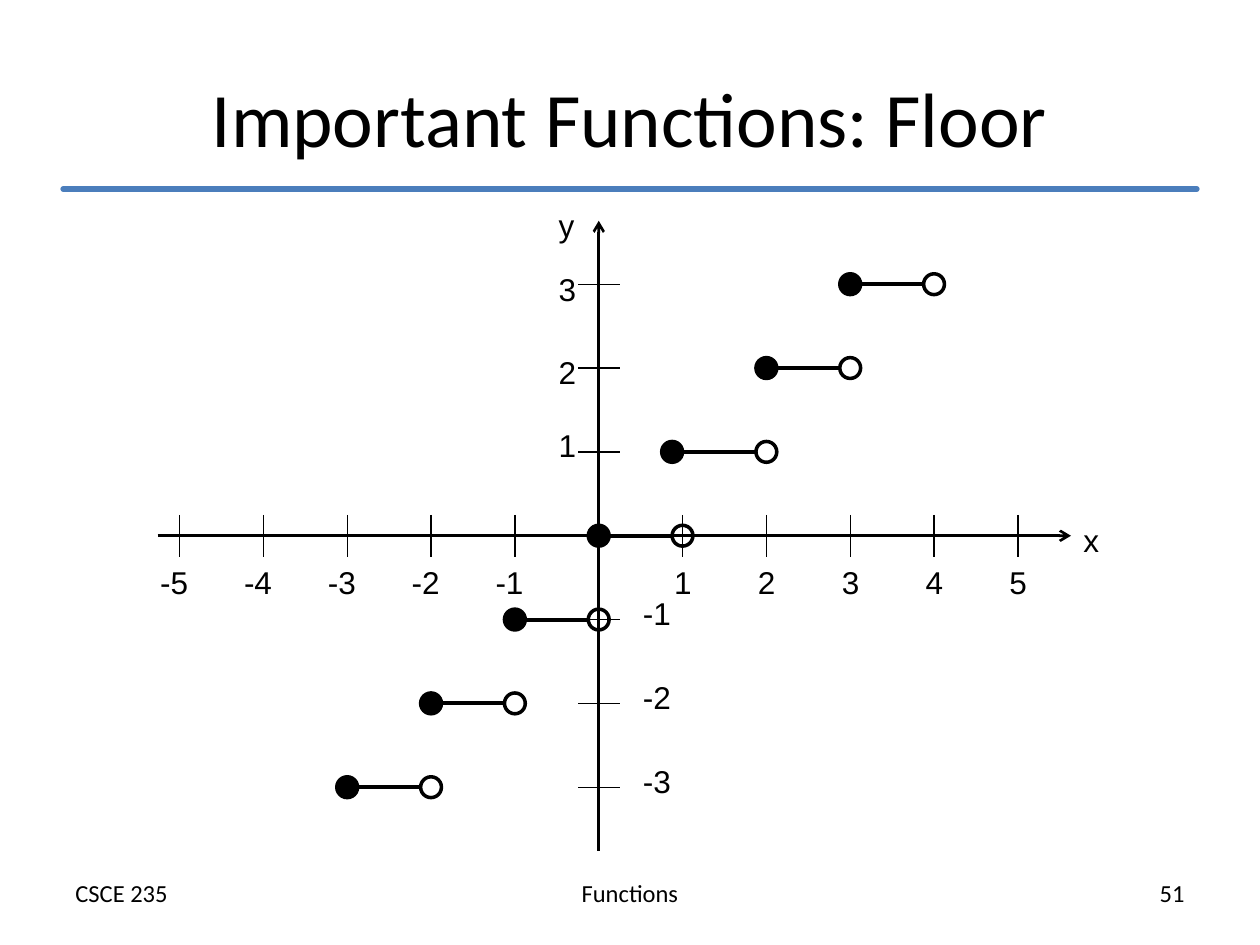
from dataclasses import dataclass

import lxml.etree
import pptx
import pptx.dml.color
import pptx.enum.shapes
import pptx.enum.text
import pptx.oxml.ns
import pptx.util

Cm = pptx.util.Cm
Pt = pptx.util.Pt
ALIGN = pptx.enum.text.PP_ALIGN


@dataclass(frozen=True)
class Theme:
    ink: str = "000000"
    accent: str = "4B7EBC"
    heading_font: str = "Calibri"
    label_font: str = "Arial"
    title_size: int = 44
    label_size: int = 18
    footer_size: int = 14
    rule_width: float = 3
    step_width: float = 2.25
    dot_width: float = 2
    axis_width: float = 1.5
    tick_width: float = 0.75


@dataclass(frozen=True)
class Box:
    left: float
    top: float
    width: float
    height: float

    def lengths(self):
        return Cm(self.left), Cm(self.top), Cm(self.width), Cm(self.height)


THEME = Theme()
UNIT = 1.69
TICK_HALF = 0.42
DOT_RADIUS = 0.21
LABEL_WIDTH, LABEL_HEIGHT = 1.27, 1.02


def color(value):
    return pptx.dml.color.RGBColor.from_string(value)


def format_paragraph(paragraph, font, size, alignment):
    paragraph.alignment = alignment
    paragraph.font.name = font
    paragraph.font.size = Pt(size)
    paragraph.font.color.rgb = color(THEME.ink)


def add_text(slide, box, text, font, size, alignment=ALIGN.LEFT):
    shape = slide.shapes.add_textbox(*box.lengths())
    frame = shape.text_frame
    frame.word_wrap = True
    frame.auto_size = pptx.enum.text.MSO_AUTO_SIZE.SHAPE_TO_FIT_TEXT
    frame.text = text
    format_paragraph(frame.paragraphs[0], font, size, alignment)


def add_label(slide, left, top, text):
    box = Box(left, top, LABEL_WIDTH, LABEL_HEIGHT)
    add_text(slide, box, text, THEME.label_font, THEME.label_size)


def add_line(slide, start, end, width, line_color=THEME.ink, arrow=False, cap=None):
    connector = slide.shapes.add_connector(
        pptx.enum.shapes.MSO_CONNECTOR.STRAIGHT, *map(Cm, (*start, *end)))
    connector.line.color.rgb = color(line_color)
    connector.line.width = Pt(width)
    properties = connector._element.spPr
    outline = properties.find(pptx.oxml.ns.qn("a:ln"))
    if cap:
        outline.set("cap", cap)
    if arrow:
        lxml.etree.SubElement(outline, pptx.oxml.ns.qn("a:tailEnd"), type="arrow")
    lxml.etree.SubElement(properties, pptx.oxml.ns.qn("a:effectLst"))


def add_dot(slide, x, y, filled):
    box = Box(x - DOT_RADIUS, y - DOT_RADIUS, 2 * DOT_RADIUS, 2 * DOT_RADIUS)
    shape = slide.shapes.add_shape(
        pptx.enum.shapes.MSO_SHAPE.OVAL, *box.lengths())
    shape.shadow.inherit = False
    if filled:
        shape.fill.solid()
        shape.fill.fore_color.rgb = color(THEME.ink)
    else:
        shape.fill.background()
    shape.line.color.rgb = color(THEME.ink)
    shape.line.width = Pt(THEME.dot_width)


def build_title(slide, box, text):
    title = slide.shapes.title
    title.left, title.top, title.width, title.height = box.lengths()
    title.text_frame.text = text
    title.text_frame.vertical_anchor = pptx.enum.text.MSO_ANCHOR.MIDDLE
    format_paragraph(title.text_frame.paragraphs[0], THEME.heading_font,
                     THEME.title_size, ALIGN.CENTER)
    rule_top = box.top + 3.05
    add_line(slide, (box.left, rule_top), (box.left + box.width, rule_top),
             THEME.rule_width, THEME.accent, cap="rnd")


def build_footer(slide, box, texts):
    width = 7.42
    gap = (box.width - 3 * width) / 2
    alignments = (ALIGN.LEFT, ALIGN.CENTER, ALIGN.RIGHT)
    for index, (text, alignment) in enumerate(zip(texts, alignments)):
        part = Box(box.left + index * (width + gap), box.top, width, box.height)
        add_text(slide, part, text, THEME.heading_font, THEME.footer_size, alignment)


def build_axes(slide, box, origin_x, origin_y):
    right, bottom = box.left + box.width, box.top + box.height
    add_line(slide, (box.left, origin_y), (right, origin_y),
             THEME.axis_width, arrow=True)
    add_line(slide, (origin_x, bottom), (origin_x, box.top),
             THEME.axis_width, arrow=True)
    add_label(slide, right, origin_y - 0.42, "x")
    add_label(slide, origin_x - 1.06, box.top - 0.42, "y")

    for value in range(-5, 6):
        if value == 0:
            continue
        x = origin_x + value * UNIT
        add_line(slide, (x, origin_y - TICK_HALF), (x, origin_y + TICK_HALF),
                 THEME.tick_width)
        add_label(slide, x - (0.42 if value > 0 else 0.64), origin_y + 0.43, str(value))

    for value in range(-3, 4):
        if value == 0:
            continue
        y = origin_y - value * UNIT
        add_line(slide, (origin_x + TICK_HALF, y), (origin_x - TICK_HALF, y),
                 THEME.tick_width)
        label_left = origin_x + (-1.06 if value > 0 else 0.64)
        add_label(slide, label_left, y - (0.64 if value < 2 else 0.42), str(value))


def build_floor_graph(slide, box):
    origin_x, origin_y = box.left + 8.89, box.top + box.height / 2
    build_axes(slide, box, origin_x, origin_y)
    closed_dot_shifts = {1: -0.21}
    for value in range(-3, 4):
        start_x = origin_x + value * UNIT
        end_x = start_x + UNIT
        y = origin_y - value * UNIT
        add_line(slide, (start_x - DOT_RADIUS, y), (end_x - DOT_RADIUS, y),
                 THEME.step_width)
        add_dot(slide, start_x + closed_dot_shifts.get(value, 0), y, filled=True)
        add_dot(slide, end_x, y, filled=False)


def main():
    presentation = pptx.Presentation()
    presentation.slide_width = Cm(25.4)
    presentation.slide_height = Cm(19.05)
    slide = presentation.slides.add_slide(presentation.slide_layouts[5])
    build_footer(slide, Box(1.27, 17.57, 22.86, 0.86), ("CSCE 235", "Functions", "51"))
    build_title(slide, Box(1.27, 0.76, 22.86, 3.18), "Important Functions: Floor")
    build_floor_graph(slide, Box(3.18, 4.45, 18.41, 12.7))
    presentation.save("out.pptx")


if __name__ == "__main__":
    main()
